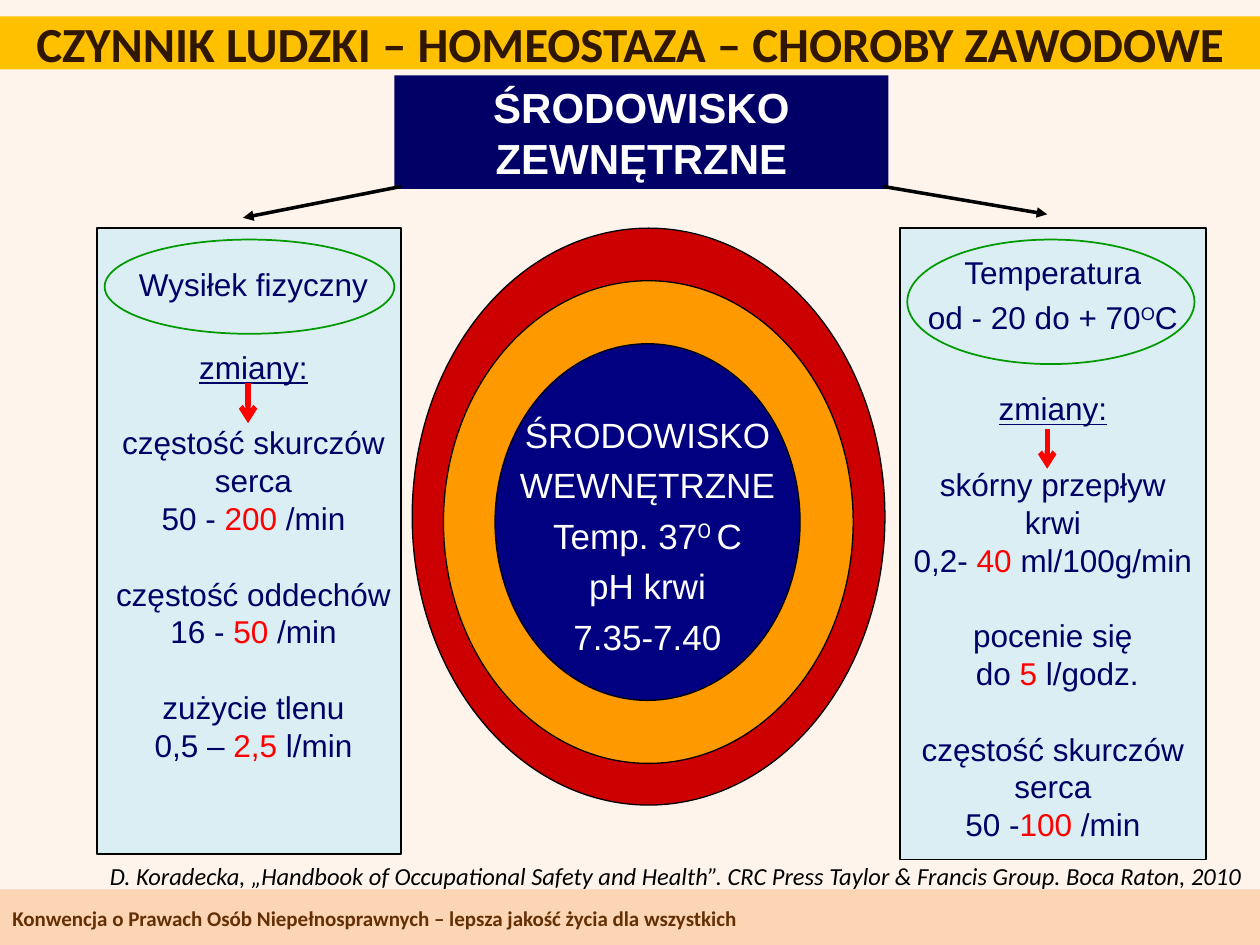
from dataclasses import dataclass
from typing import Optional

from lxml.etree import SubElement
from pptx import Presentation
from pptx.dml.color import RGBColor
from pptx.enum.shapes import MSO_CONNECTOR, MSO_SHAPE
from pptx.enum.text import MSO_ANCHOR, MSO_AUTO_SIZE, PP_ALIGN
from pptx.oxml.ns import qn
from pptx.util import Cm, Pt

NAVY, RED, WHITE, BLACK = "000066", "FF0000", "FFFFFF", "000000"
LINE = 21.6  # line height of the column text, in points


@dataclass
class Box:
    x: float
    y: float
    w: float
    h: float

    def emu(self) -> tuple:
        return Cm(self.x), Cm(self.y), Cm(self.w), Cm(self.h)


@dataclass
class Run:
    text: str
    color: Optional[str] = None
    font: Optional[str] = None
    underline: bool = False
    raised: bool = False


@dataclass
class Para:
    runs: list
    before: float = 0


@dataclass
class Style:
    size: float
    color: str
    font: str = "Arial"
    bold: bool = False
    italic: bool = False
    align: PP_ALIGN = PP_ALIGN.CENTER
    line: Optional[float] = None


@dataclass
class Arrow:
    start: tuple
    end: tuple
    color: str
    width: float
    head: str


def rgb(value: str) -> RGBColor:
    return RGBColor.from_string(value)


def paint(sp, fill: Optional[str], line: Optional[str] = None, width: float = 1) -> None:
    if fill:
        sp.fill.solid()
        sp.fill.fore_color.rgb = rgb(fill)
    else:
        sp.fill.background()
    if line:
        sp.line.color.rgb = rgb(line)
        sp.line.width = Pt(width)
    else:
        sp.line.fill.background()


def add_shape(s, kind, box: Box, fill: Optional[str], line: Optional[str] = None, width: float = 1):
    sp = s.shapes.add_shape(kind, *box.emu())
    sp.shadow.inherit = False
    paint(sp, fill, line, width)
    return sp


def place(sp, box: Box) -> None:
    sp.left, sp.top, sp.width, sp.height = box.emu()


def write(sp, paras: list, style: Style, anchor=MSO_ANCHOR.MIDDLE, wrap: bool = True) -> None:
    tf = sp.text_frame
    tf.word_wrap = wrap
    tf.auto_size = MSO_AUTO_SIZE.NONE
    tf.vertical_anchor = anchor
    for i, para in enumerate(paras):
        p = tf.add_paragraph() if i else tf.paragraphs[0]
        pPr = p._p.get_or_add_pPr()
        pPr.set("marL", "0")
        pPr.set("indent", "0")
        SubElement(pPr, qn("a:buNone"))
        p.alignment = style.align
        p.space_before = Pt(para.before)
        if style.line:
            p.line_spacing = Pt(style.line)
        for run in para.runs:
            r = p.add_run()
            r.text = run.text
            r.font.size = Pt(style.size)
            r.font.name = run.font or style.font
            r.font.bold = style.bold
            r.font.italic = style.italic
            r.font.underline = run.underline
            r.font.color.rgb = rgb(run.color or style.color)
            if run.raised:
                r.font._element.set("baseline", "30000")


def add_arrow(s, arrow: Arrow) -> None:
    ends = [Cm(v) for v in arrow.start + arrow.end]
    c = s.shapes.add_connector(MSO_CONNECTOR.STRAIGHT, *ends)
    c.line.color.rgb = rgb(arrow.color)
    c.line.width = Pt(arrow.width)
    SubElement(c.line._get_or_add_ln(), qn("a:tailEnd"), type=arrow.head)
    SubElement(c._element.spPr, qn("a:effectLst"))


def plain(text: str, before: float = 0) -> Para:
    return Para([Run(text)], before)


def value(low: str, high: str, unit: str) -> Para:
    return Para([Run(low), Run(high, RED), Run(unit)])


def changes(before: float) -> Para:
    return Para([Run("zmiany:", underline=True)], before)


EFFORT = [
    plain("Wysiłek fizyczny"), changes(25.8),
    plain("częstość skurczów", LINE), plain("serca"), value("50 - ", "200 ", "/min"),
    plain("częstość oddechów", LINE), value("16 - ", "50", " /min"),
    plain("zużycie tlenu", LINE), value("0,5 – ", "2,5", " l/min"),
]
TEMPERATURE = [
    plain("Temperatura"),
    Para([Run("od - 20 do + 70"), Run("O", raised=True), Run("C")], 4.1),
    changes(30.4),
    plain("skórny przepływ", LINE), plain("krwi"), value("0,2- ", "40 ", "ml/100g/min"),
    plain("pocenie się", LINE), value(" do ", "5", " l/godz."),
    plain("częstość skurczów", LINE), plain("serca"), value("50 -", "100", " /min"),
]
INNER = [
    plain("ŚRODOWISKO"), plain("WEWNĘTRZNE"),
    Para([Run("Temp. 37"), Run("O ", font="Roboto", raised=True), Run("C")]),
    plain("pH krwi"), plain("7.35-7.40"),
]
ARROWS = [
    Arrow((8.08, 3.76), (4.9, 4.39), BLACK, 2, "triangle"),
    Arrow((17.81, 3.76), (21.11, 4.32), BLACK, 2, "triangle"),
    Arrow((5, 7.72), (5, 8.53), RED, 3, "arrow"),
    Arrow((21.11, 8.64), (21.11, 9.45), RED, 3, "arrow"),
]


def main() -> None:
    prs = Presentation()
    prs.slide_width, prs.slide_height = Cm(25.4), Cm(19.05)
    s = prs.slides.add_slide(prs.slide_layouts[3])
    s.background.fill.solid()
    s.background.fill.fore_color.rgb = rgb("FEF4EC")
    title, left, right = s.placeholders

    # Title band
    place(title, Box(0, 0.33, 25.4, 1.07))
    paint(title, "FFC000")
    write(title, [plain("CZYNNIK LUDZKI – HOMEOSTAZA – CHOROBY ZAWODOWE")],
          Style(28, "301702", "Calibri", bold=True))

    # Side columns: box, inner left and top margins, text
    columns = [
        (left, Box(1.96, 4.6, 6.12, 12.62), 0.18, 0.74, EFFORT),
        (right, Box(18.14, 4.6, 6.17, 12.73), 0, 0.51, TEMPERATURE),
    ]
    for sp, box, margin_left, margin_top, paras in columns:
        place(sp, box)
        paint(sp, "DBEEF4", BLACK)
        tf = sp.text_frame
        tf.margin_left, tf.margin_top = Cm(margin_left), Cm(margin_top)
        tf.margin_right = tf.margin_bottom = 0
        write(sp, paras, Style(18, NAVY, line=LINE), MSO_ANCHOR.TOP)

    # Nested ellipses, the innermost one holding the text
    rings = [
        (Box(8.31, 4.6, 9.53, 11.63), "CC0000"),
        (Box(8.94, 5.66, 8.26, 9.73), "FF9900"),
        (Box(9.98, 6.93, 6.15, 7.19), "000080"),
    ]
    for box, fill in rings:
        core = add_shape(s, MSO_SHAPE.OVAL, box, fill, BLACK, 0.75)
    core.text_frame.margin_top, core.text_frame.margin_bottom = Cm(0.36), 0
    write(core, INNER, Style(20, WHITE, line=28.9), wrap=False)

    # Outer environment
    outer = add_shape(s, MSO_SHAPE.RECTANGLE, Box(7.95, 1.52, 9.96, 2.29), NAVY)
    write(outer, [plain("ŚRODOWISKO ZEWNĘTRZNE")], Style(24, WHITE, bold=True, line=29.1))

    # Arrows and heading ovals
    for arrow in ARROWS:
        add_arrow(s, arrow)
    for box in (Box(2.11, 4.83, 5.84, 1.9), Box(18.29, 4.83, 5.79, 2.51)):
        add_shape(s, MSO_SHAPE.OVAL, box, None, "009900")

    # Citation and footer
    add_shape(s, MSO_SHAPE.RECTANGLE, Box(0, 17.93, 25.4, 1.12), "FCD5B5")
    notes = [
        (Box(0, 18.11, 25.4, 0.79),
         "Konwencja o Prawach Osób Niepełnosprawnych – lepsza jakość życia dla wszystkich",
         Style(12, "642F04", "Calibri", bold=True, align=PP_ALIGN.LEFT)),
        (Box(1.7, 17.22, 23.6, 0.86),
         "D. Koradecka, „Handbook of Occupational Safety and Health”. "
         "CRC Press Taylor & Francis Group. Boca Raton, 2010",
         Style(14, BLACK, "Calibri", italic=True, align=PP_ALIGN.RIGHT)),
    ]
    for box, text, style in notes:
        write(s.shapes.add_textbox(*box.emu()), [plain(text)], style)

    prs.save("out.pptx")


if __name__ == "__main__":
    main()
